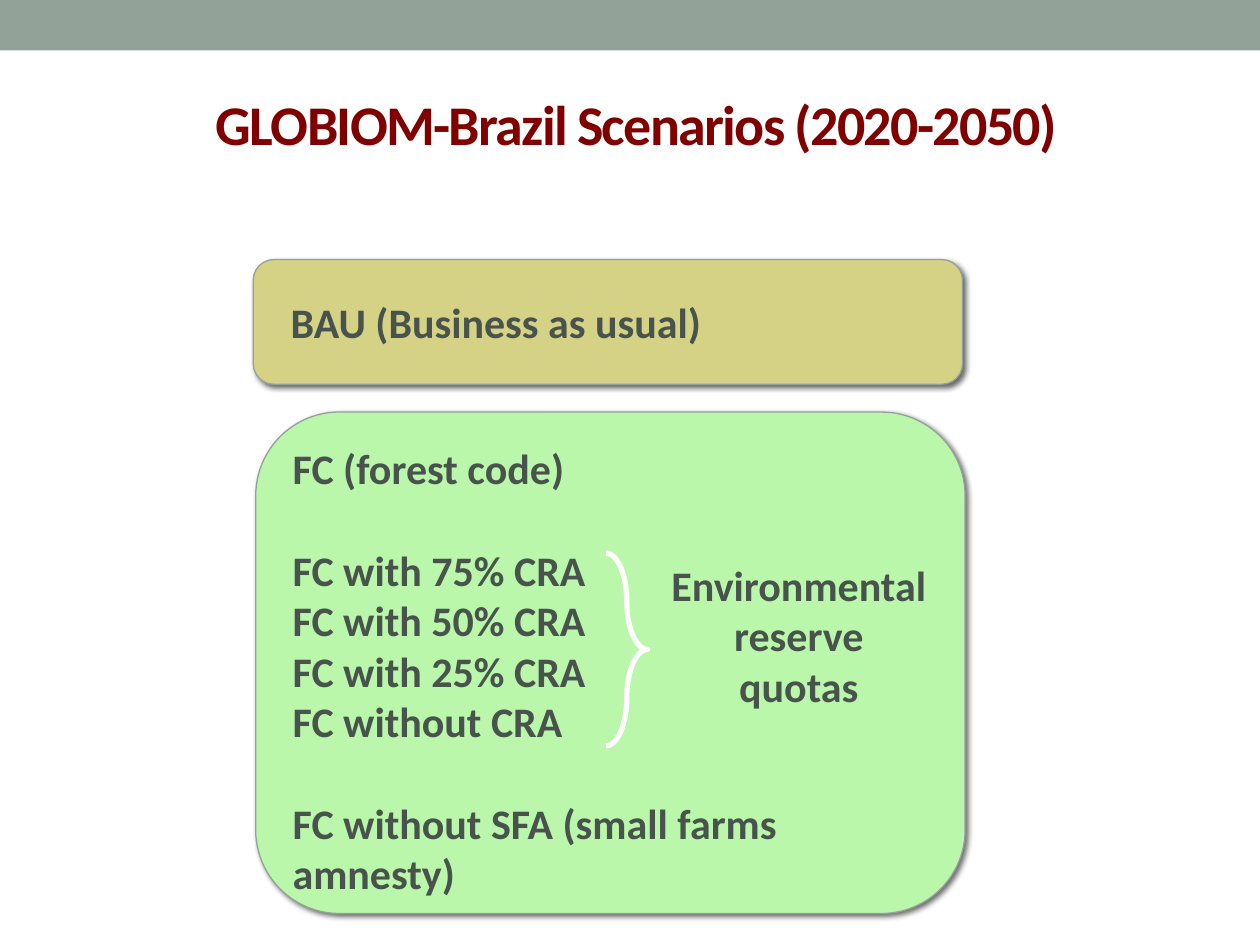
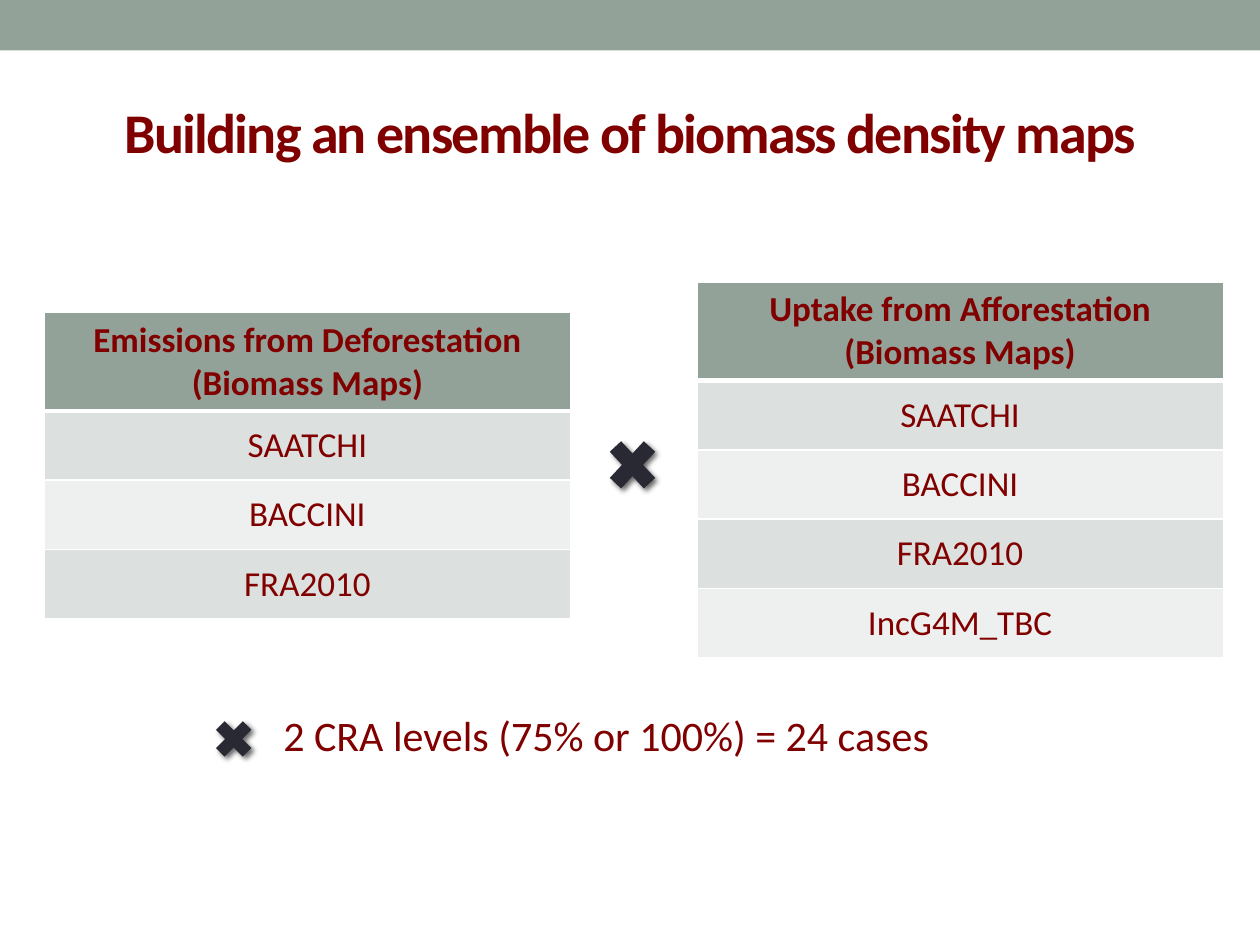
import dataclasses
from typing import Optional

import lxml.etree
import pptx
import pptx.dml.color
import pptx.enum.shapes
import pptx.enum.text
import pptx.oxml.ns
import pptx.util

Inches = pptx.util.Inches
Pt = pptx.util.Pt
Shapes = pptx.enum.shapes.MSO_SHAPE
Align = pptx.enum.text.PP_ALIGN
Anchor = pptx.enum.text.MSO_ANCHOR

FONT = "Calibri"
SAGE = "93A299"
MAROON = "800000"
SLATE = "47534C"
INK = "292934"
WHITE = "FFFFFF"
STRIPES = ("DCE0DE", "EEF0EF")
HEADER_HEIGHT = 0.77
ROW_HEIGHT = 0.55
SCENARIO_GAP = 29.3


@dataclasses.dataclass
class Area:
    left: float
    top: float
    width: float
    height: float

    def lengths(self) -> tuple:
        return tuple(Inches(value) for value in dataclasses.astuple(self))


@dataclasses.dataclass
class Line:
    text: str
    space_before: float = 0


@dataclasses.dataclass
class TextStyle:
    size: float
    color: str
    bold: bool = False
    align: Align = Align.LEFT
    tracking: float = 0
    line_spacing: Optional[float] = None


@dataclasses.dataclass
class ScenarioPanel:
    area: Area
    fill: str
    anchor: Anchor
    left_inset: float
    lines: list


@dataclasses.dataclass
class MapTable:
    left: float
    top: float
    heading: list
    maps: list


TITLE_STYLE = TextStyle(32, MAROON, True, Align.CENTER, tracking=-1)
SCENARIO_STYLE = TextStyle(24, SLATE, True)
HEADING_STYLE = TextStyle(20, MAROON, True, Align.CENTER)
MAP_STYLE = TextStyle(20, MAROON, align=Align.CENTER)

PANELS = [
    ScenarioPanel(Area(2.01, 2.06, 5.63, 0.99), "D5D286", Anchor.MIDDLE, 0.25,
                  [Line("BAU (Business as usual)")]),
    ScenarioPanel(Area(2.03, 3.27, 5.63, 3.98), "BAF7AA", Anchor.TOP, 0.1, [
        Line("FC (forest code)"),
        Line("FC with 75% CRA", SCENARIO_GAP),
        Line("FC with 50% CRA"),
        Line("FC with 25% CRA"),
        Line("FC without CRA"),
        Line("FC without SFA (small farms amnesty)", SCENARIO_GAP),
    ]),
]

MAP_TABLES = [
    MapTable(0.35, 2.48, [Line("Emissions from Deforestation"), Line("(Biomass Maps)")],
             ["SAATCHI", "BACCINI", "FRA2010"]),
    MapTable(5.53, 2.24, [Line("Uptake from Afforestation"), Line("(Biomass Maps)")],
             ["SAATCHI", "BACCINI", "FRA2010", "IncG4M_TBC"]),
]

TIMES_SIGNS = [Area(1.65, 5.66, 0.41, 0.41), Area(4.76, 3.41, 0.52, 0.56)]


def rgb(color: str) -> pptx.dml.color.RGBColor:
    return pptx.dml.color.RGBColor.from_string(color)


def add_node(parent, tag: str, **attributes):
    node = lxml.etree.SubElement(parent, pptx.oxml.ns.qn(tag))
    for name, value in attributes.items():
        node.set(name, str(value))
    return node


def write_lines(frame, lines: list, style: TextStyle) -> None:
    for index, line in enumerate(lines):
        para = frame.paragraphs[0] if index == 0 else frame.add_paragraph()
        para.alignment = style.align
        para.space_before = Pt(line.space_before)
        if style.line_spacing:
            para.line_spacing = style.line_spacing
        span = para.add_run()
        span.text = line.text
        span.font.name = FONT
        span.font.size = Pt(style.size)
        span.font.bold = style.bold
        span.font.color.rgb = rgb(style.color)
        if style.tracking:
            span._r.get_or_add_rPr().set("spc", str(int(style.tracking * 100)))


def add_figure(page, kind: Shapes, area: Area, fill: Optional[str] = None,
               line: Optional[str] = None, line_width: float = 0.75, shadow: bool = False):
    figure = page.shapes.add_shape(kind, *area.lengths())
    figure.shadow.inherit = False
    if fill:
        figure.fill.solid()
        figure.fill.fore_color.rgb = rgb(fill)
    else:
        figure.fill.background()
    if line:
        figure.line.color.rgb = rgb(line)
        figure.line.width = Pt(line_width)
    else:
        figure.line.fill.background()
    if shadow:
        effects = figure.element.spPr.find(pptx.oxml.ns.qn("a:effectLst"))
        outer = add_node(effects, "a:outerShdw", blurRad=Pt(3), dist=Pt(2),
                         dir=45 * 60000, algn="ctr", rotWithShape=0)
        add_node(add_node(outer, "a:srgbClr", val="000000"), "a:alpha", val=60000)
    return figure


def add_text(page, area: Area, lines: list, style: TextStyle, wrap: bool = True) -> None:
    frame = page.shapes.add_textbox(*area.lengths()).text_frame
    frame.word_wrap = wrap
    write_lines(frame, lines, style)


def add_page(deck, title: str, title_area: Area, style: TextStyle):
    page = deck.slides.add_slide(deck.slide_layouts[5])
    add_figure(page, Shapes.RECTANGLE, Area(0, 0, 10, 0.4), SAGE)
    box = page.shapes.title
    box.left, box.top, box.width, box.height = title_area.lengths()
    frame = box.text_frame
    frame.word_wrap = True
    frame.auto_size = pptx.enum.text.MSO_AUTO_SIZE.NONE
    frame.vertical_anchor = Anchor.MIDDLE
    write_lines(frame, [Line(title)], style)
    return page


def add_panel(page, panel: ScenarioPanel) -> None:
    box = add_figure(page, Shapes.ROUNDED_RECTANGLE, panel.area, panel.fill, SAGE, shadow=True)
    frame = box.text_frame
    frame.word_wrap = True
    frame.vertical_anchor = panel.anchor
    frame.margin_left = Inches(panel.left_inset)
    write_lines(frame, panel.lines, SCENARIO_STYLE)


def format_cell(cell, lines: list, style: TextStyle, fill: str,
                top_width: float, bottom_width: float) -> None:
    properties = cell._tc.get_or_add_tcPr()
    for side, width in (("L", 1), ("R", 1), ("T", top_width), ("B", bottom_width)):
        border = add_node(properties, f"a:ln{side}", w=Pt(width))
        add_node(add_node(border, "a:solidFill"), "a:srgbClr", val=WHITE)
    cell.fill.solid()
    cell.fill.fore_color.rgb = rgb(fill)
    cell.vertical_anchor = Anchor.MIDDLE
    write_lines(cell.text_frame, lines, style)


def add_map_table(page, spec_table: MapTable) -> None:
    count = len(spec_table.maps)
    area = Area(spec_table.left, spec_table.top, 4.18, HEADER_HEIGHT + count * ROW_HEIGHT)
    table = page.shapes.add_table(count + 1, 1, *area.lengths()).table
    table.rows[0].height = Inches(HEADER_HEIGHT)
    format_cell(table.cell(0, 0), spec_table.heading, HEADING_STYLE, SAGE, 1, 3)
    for index, name in enumerate(spec_table.maps):
        table.rows[index + 1].height = Inches(ROW_HEIGHT)
        format_cell(table.cell(index + 1, 0), [Line(name)], MAP_STYLE,
                    STRIPES[index % 2], 3 if index == 0 else 1, 1)


def build_scenarios(deck) -> None:
    page = add_page(deck, "GLOBIOM-Brazil Scenarios (2020-2050)",
                    Area(0, 0.44, 10.1, 1.08), TITLE_STYLE)
    for panel in PANELS:
        add_panel(page, panel)
    brace = add_figure(page, Shapes.RIGHT_BRACE, Area(4.81, 4.39, 0.33, 1.53),
                       line=WHITE, line_width=3)
    brace.adjustments[0] = 1.17
    add_text(page, Area(5.14, 4.39, 2.4, 1.72),
             [Line("Environmental"), Line("reserve"), Line("quotas")],
             dataclasses.replace(SCENARIO_STYLE, align=Align.CENTER))


def build_ensemble(deck) -> None:
    page = add_page(deck, "Building an ensemble of biomass density maps",
                    Area(0, 0.55, 10, 1.08),
                    dataclasses.replace(TITLE_STYLE, line_spacing=0.8))
    for map_table in MAP_TABLES:
        add_map_table(page, map_table)
    for area in TIMES_SIGNS:
        add_figure(page, Shapes.MATH_MULTIPLY, area, INK, shadow=True)
    add_text(page, Area(2.15, 5.58, 5.39, 0.5),
             [Line("2 CRA levels (75% or 100%) = 24 cases")],
             TextStyle(24, MAROON), wrap=False)


def main() -> None:
    deck = pptx.Presentation()
    deck.slide_width = Inches(10)
    deck.slide_height = Inches(7.5)
    build_scenarios(deck)
    build_ensemble(deck)
    deck.save("out.pptx")


if __name__ == "__main__":
    main()
